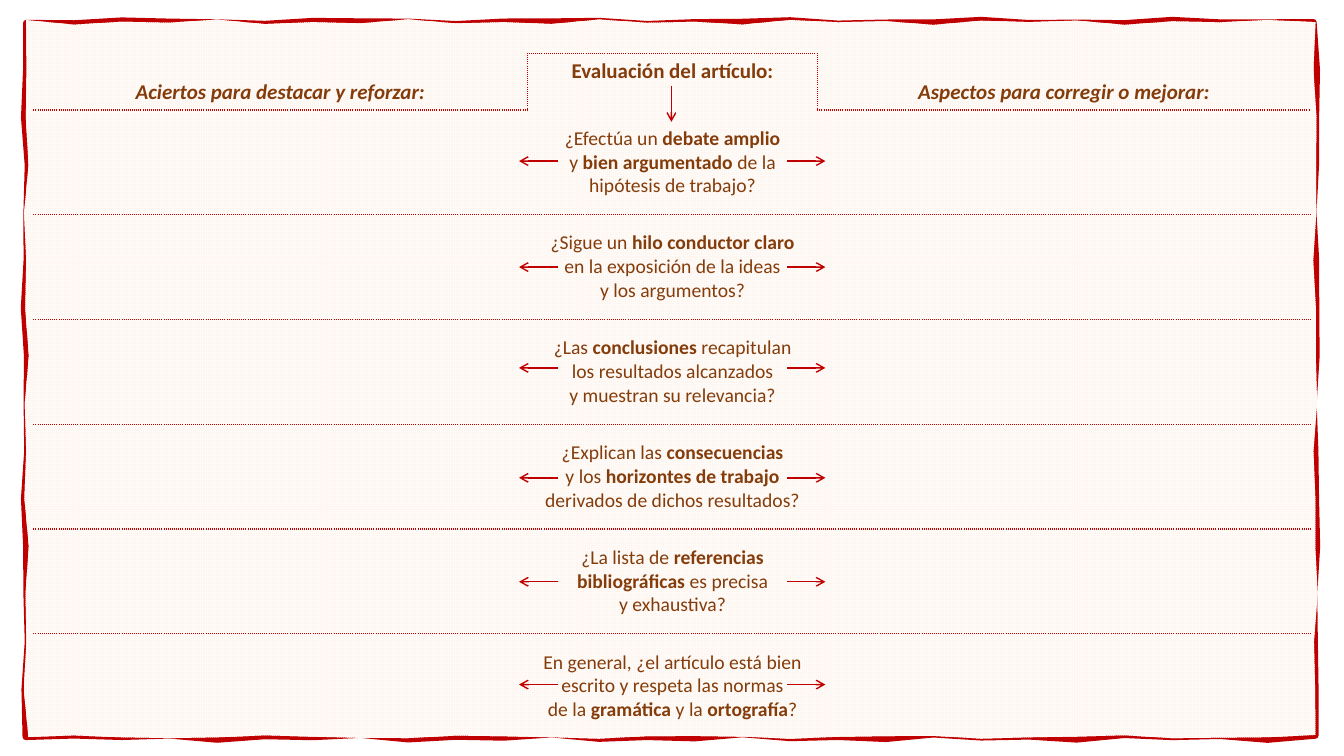
from copy import deepcopy
from math import hypot, sin

from lxml import etree
from pptx import Presentation
from pptx.dml.color import RGBColor
from pptx.enum import dml, shapes, text
from pptx.oxml import ns
from pptx.util import Cm, Pt

COLORS = {"red": "C00000", "brown": "843C0B", "cream": "FEF6F0", "white": "FFFFFF"}
FONT = "Calibri"
UNITS_PER_CM = 1000

COLUMN_WIDTHS = [12.45, 2.95, 4.37, 8.81, 3.6]
ROW_HEIGHTS = [0.61, 1.42] + [2.64] * 6
ARROW_HEIGHTS = [4.06, 6.73, 9.27, 12.04, 14.66, 17.25]

# Odd pieces between asterisks are bold.
QUESTIONS = [
    "¿Efectúa un *debate amplio*\ny *bien argumentado* de la hipótesis de trabajo?",
    "¿Sigue un *hilo conductor claro*\nen la exposición de la ideas\ny los argumentos?",
    "¿Las *conclusiones* recapitulan\nlos resultados alcanzados\ny muestran su relevancia?",
    "¿Explican las *consecuencias*\ny los *horizontes de trabajo*\nderivados de dichos resultados?",
    "¿La lista de *referencias bibliográficas* es precisa\ny exhaustiva?",
    "En general, ¿el artículo está bien escrito y respeta las normas\n"
    "de la *gramática* y la *ortografía*?",
]


def color(name):
    return RGBColor.from_string(COLORS[name])


def sub(parent, tag, **attributes):
    return etree.SubElement(parent, ns.qn(tag), attributes)


def write(cell, content, size=14, italic=False, anchor=text.MSO_ANCHOR.MIDDLE, after=0):
    """Fill a cell with centred text, where *asterisks* enclose bold words."""
    cell.vertical_anchor = anchor
    paragraph = cell.text_frame.paragraphs[0]
    paragraph.alignment = text.PP_ALIGN.CENTER
    paragraph.space_after = Pt(after)
    for index, piece in enumerate(content.split("*")):
        for line_index, line in enumerate(piece.split("\n")):
            if line_index:
                paragraph.add_line_break()
            if not line:
                continue
            run = paragraph.add_run()
            run.text = line
            run.font.name = FONT
            run.font.size = Pt(size)
            run.font.bold = index % 2 == 1
            run.font.italic = italic
            run.font.color.rgb = color("brown")


def wavy_outline(phase, left=0.66, top=0.56, right=33.15, bottom=18.57):
    """Return the points of a rectangle whose sides waver."""
    corners = [(left, top), (right, top), (right, bottom), (left, bottom)]
    points = []
    for side, (x0, y0) in enumerate(corners):
        x1, y1 = corners[(side + 1) % 4]
        length = hypot(x1 - x0, y1 - y0)
        dx, dy = (x1 - x0) / length, (y1 - y0) / length
        steps = int(length / 1.2)
        for step in range(steps):
            along = length * step / steps
            sway = 0.07 * sin(1.9 * along + phase + side) * sin(0.7 * along + 2 * phase)
            points.append(((x0 + dx * along - dy * sway) * UNITS_PER_CM,
                           (y0 + dy * along + dx * sway) * UNITS_PER_CM))
    return points


def add_brushed_frame(slide):
    """Draw a stroked outline with a slightly different filled one over it."""
    stroke, paper = wavy_outline(0.4), wavy_outline(2.1)
    builder = slide.shapes.build_freeform(*stroke[0], scale=Cm(1) / UNITS_PER_CM)
    builder.add_line_segments(stroke[1:], close=True)
    builder.move_to(*paper[0])
    builder.add_line_segments(paper[1:], close=True)
    frame = builder.convert_to_shape()
    frame.shadow.inherit = False
    frame.fill.patterned()
    frame.fill.pattern = dml.MSO_PATTERN.SMALL_GRID
    frame.fill.fore_color.rgb = color("cream")
    frame.fill.back_color.rgb = color("white")
    frame.line.color.rgb = color("red")
    frame.line.width = Pt(4.5)

    stroke_part = frame._element.xpath(".//a:path")[0]
    paper_part = deepcopy(stroke_part)
    stroke_part.addnext(paper_part)
    paper_start = [segment.tag for segment in stroke_part].index(ns.qn("a:moveTo"), 1)
    for segment in list(stroke_part)[paper_start:]:
        stroke_part.remove(segment)
    for segment in list(paper_part)[:paper_start]:
        paper_part.remove(segment)
    stroke_part.set("fill", "none")
    paper_part.set("stroke", "0")


def has_rule_above(row, column):
    if row == 1:
        return column in (1, 2)
    if row == 2:
        return column in (0, 3, 4)
    return 2 < row < len(ROW_HEIGHTS)


def set_borders(cell, row, column):
    sides = {
        "a:lnL": row == 1 and column in (1, 3),
        "a:lnR": row == 1 and column in (0, 1, 2),
        "a:lnT": has_rule_above(row, column),
        "a:lnB": has_rule_above(row + 1, column),
    }
    properties = cell._tc.get_or_add_tcPr()
    for tag, visible in sides.items():
        border = sub(properties, tag, w=str(Pt(1)))
        if visible:
            sub(sub(border, "a:solidFill"), "a:srgbClr", val=COLORS["red"])
            sub(border, "a:prstDash", val="sysDot")
        else:
            sub(border, "a:noFill")


def add_evaluation_table(slide):
    table = slide.shapes.add_table(
        len(ROW_HEIGHTS), len(COLUMN_WIDTHS), Cm(0.84), Cm(0.74),
        Cm(sum(COLUMN_WIDTHS)), Cm(sum(ROW_HEIGHTS))).table
    table.first_row = table.horz_banding = False
    for column, width in enumerate(COLUMN_WIDTHS):
        table.columns[column].width = Cm(width)
    for row, height in enumerate(ROW_HEIGHTS):
        table.rows[row].height = Cm(height)
        for column in range(len(COLUMN_WIDTHS)):
            cell = table.cell(row, column)
            set_borders(cell, row, column)
            cell.fill.background()
            if row == 0:
                cell.margin_top = cell.margin_bottom = 0
                sub(cell.text_frame.paragraphs[0]._p, "a:endParaRPr", sz="600")
        if row > 0:
            for first in (1, 3):
                table.cell(row, first).merge(table.cell(row, first + 1))

    bottom = text.MSO_ANCHOR.BOTTOM
    write(table.cell(1, 0), "*Aciertos para destacar y reforzar:*", 15, True, bottom)
    write(table.cell(1, 1), "*Evaluación del artículo:*", 15, anchor=text.MSO_ANCHOR.TOP)
    write(table.cell(1, 3), "*Aspectos para corregir o mejorar:*", 15, True, bottom)
    for row, question in enumerate(QUESTIONS, start=2):
        write(table.cell(row, 1), question, after=3)


def add_arrow(slide, x0, y0, x1, y1):
    arrow = slide.shapes.add_connector(
        shapes.MSO_CONNECTOR.STRAIGHT, Cm(x0), Cm(y0), Cm(x1), Cm(y1))
    arrow.line.color.rgb = color("red")
    arrow.line.width = Pt(1)
    sub(arrow.line._get_or_add_ln(), "a:tailEnd", type="arrow")
    sub(arrow._element.spPr, "a:effectLst")


def main():
    deck = Presentation()
    deck.slide_width, deck.slide_height = Cm(33.87), Cm(19.05)
    slide = deck.slides.add_slide(deck.slide_layouts[6])
    add_brushed_frame(slide)
    add_evaluation_table(slide)
    add_arrow(slide, 16.92, 2.16, 16.92, 3.07)
    for y in ARROW_HEIGHTS:
        add_arrow(slide, 19.84, y, 20.8, y)
        add_arrow(slide, 14.07, y, 13.08, y)
    deck.save("out.pptx")


if __name__ == "__main__":
    main()
